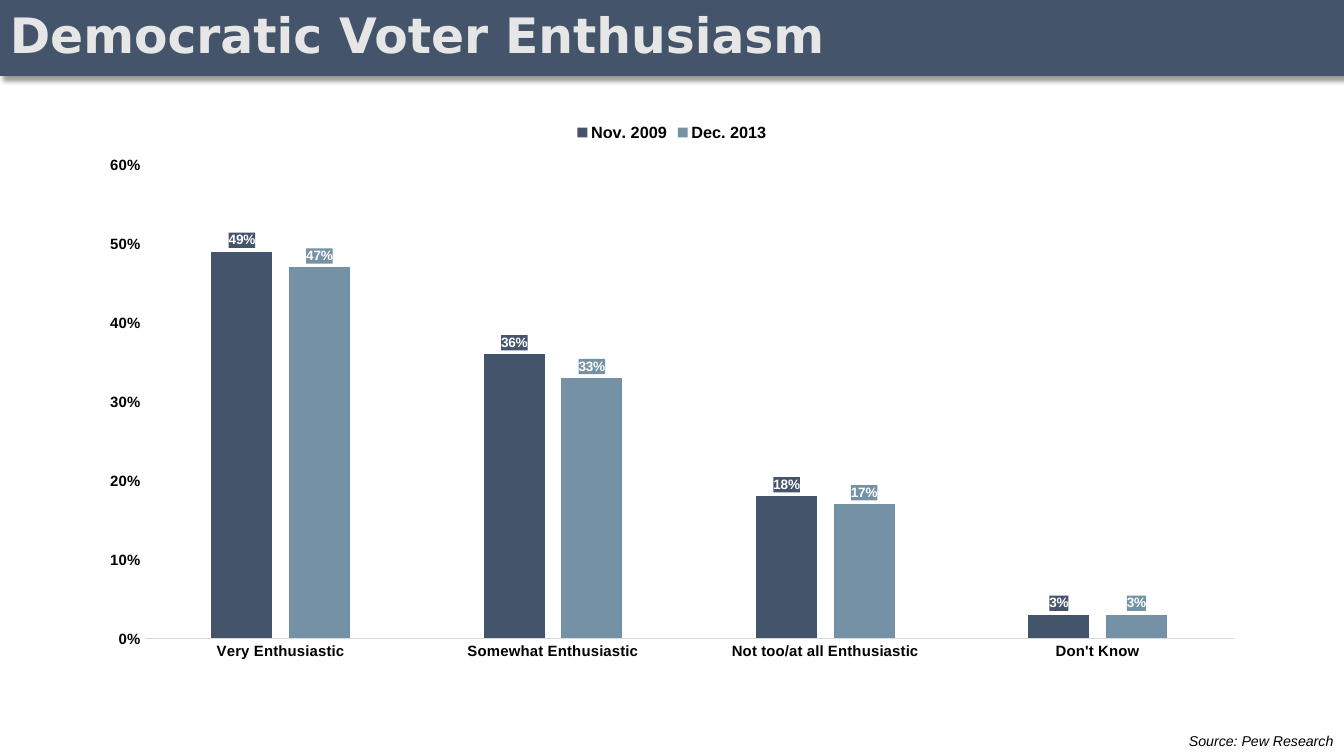
"""Build a slide with a column chart of voter enthusiasm in two years."""
import pptx
import pptx.chart.data
import pptx.dml.color
import pptx.enum.chart
import pptx.enum.shapes
import pptx.enum.text
import pptx.oxml
import pptx.oxml.ns
import pptx.util

Cm, Pt = pptx.util.Cm, pptx.util.Pt

TITLE = "Democratic Voter Enthusiasm"
SOURCE = "Source: Pew Research"
GROUPS = ["Very Enthusiastic", "Somewhat Enthusiastic",
          "Not too/at all Enthusiastic", "Don't Know"]
SERIES = [
    ("Nov. 2009", "44546A", (0.49, 0.36, 0.18, 0.03)),
    ("Dec. 2013", "7591A5", (0.47, 0.33, 0.17, 0.03)),
]
NAVY, PALE, BLACK, WHITE, GREY = "44546A", "E7E6E6", "000000", "FFFFFF", "D9D9D9"
PERCENT = "0%"

WIDE, HIGH = Cm(35), Cm(19.69)
BAND = (0, 0, WIDE, Cm(1.97))
CHART = (Cm(2.26), Cm(2.94), Cm(30.48), Cm(14.53))
NOTE = (Cm(28.58), Cm(18.96), Cm(6.4), Cm(0.74))

SHADOW = (
    '<a:effectLst %s><a:outerShdw blurRad="50800" dist="38100" dir="2700000" '
    'algn="tl" rotWithShape="0"><a:srgbClr val="000000"><a:alpha val="40000"/>'
    '</a:srgbClr></a:outerShdw></a:effectLst>' % pptx.oxml.ns.nsdecls("a"))
TAG = ('<c:spPr %s><a:solidFill><a:srgbClr val="%s"/></a:solidFill>'
       '<a:ln><a:noFill/></a:ln></c:spPr>')


def paint(fill, tone):
    """Set a solid colour on a fill."""
    fill.solid()
    fill.fore_color.rgb = pptx.dml.color.RGBColor.from_string(tone)


def style(font, size, tone, face="Arial", bold=False, slant=False):
    """Set the face, size, colour and weight of a font."""
    font.name, font.size = face, Pt(size)
    font.bold, font.italic = bold, slant
    paint(font.fill, tone)


def add_head(slide):
    """Add the title on its shaded band."""
    title = slide.shapes.title
    band = slide.shapes.add_shape(pptx.enum.shapes.MSO_SHAPE.RECTANGLE, *BAND)
    paint(band.fill, NAVY)
    paint(band.line.fill, NAVY)
    band.line.width = Pt(1)
    band.element.spPr.append(pptx.oxml.parse_xml(SHADOW))
    title.element.addprevious(band.element)

    title.left, title.top, title.width, title.height = BAND
    frame = title.text_frame
    frame.text = TITLE
    frame.vertical_anchor = pptx.enum.text.MSO_ANCHOR.MIDDLE
    para = frame.paragraphs[0]
    para.alignment = pptx.enum.text.PP_ALIGN.LEFT
    para.line_spacing = 0.9
    style(para.runs[0].font, 36, PALE, "DejaVu Sans", bold=True)


def add_note(slide):
    """Add the source line."""
    frame = slide.shapes.add_textbox(*NOTE).text_frame
    frame.word_wrap = True
    frame.text = SOURCE
    para = frame.paragraphs[0]
    para.alignment = pptx.enum.text.PP_ALIGN.RIGHT
    style(para.runs[0].font, 10.5, BLACK, slant=True)


def add_chart(slide):
    """Add the column chart with its legend."""
    data = pptx.chart.data.CategoryChartData(number_format=PERCENT)
    data.categories = GROUPS
    for name, tone, vals in SERIES:
        data.add_series(name, vals)
    kind = pptx.enum.chart.XL_CHART_TYPE.COLUMN_CLUSTERED
    chart = slide.shapes.add_chart(kind, *CHART, data).chart
    style(chart.font, 10, BLACK)
    chart.has_title = False
    chart.has_legend = True
    chart.legend.position = pptx.enum.chart.XL_LEGEND_POSITION.TOP
    chart.legend.include_in_layout = False
    style(chart.legend.font, 12, BLACK, bold=True)
    return chart


def set_axes(chart):
    """Format the group axis and the percent scale."""
    groups, scale = chart.category_axis, chart.value_axis
    for axis in (groups, scale):
        axis.has_major_gridlines = False
        axis.major_tick_mark = pptx.enum.chart.XL_TICK_MARK.NONE
        axis.minor_tick_mark = pptx.enum.chart.XL_TICK_MARK.NONE
        style(axis.tick_labels.font, 11, BLACK, bold=True)
    paint(groups.format.line.fill, GREY)
    groups.format.line.width = Pt(0.75)
    scale.format.line.fill.background()
    scale.minimum_scale, scale.maximum_scale, scale.major_unit = 0, 0.6, 0.1
    scale.tick_labels.number_format = PERCENT
    scale.tick_labels.number_format_is_linked = False


def set_bars(chart):
    """Colour the bars and put a label in the same colour above each."""
    plot = chart.plots[0]
    plot.vary_by_categories = False
    plot.gap_width, plot.overlap = 219, -27
    for bars, (name, tone, vals) in zip(plot.series, SERIES):
        paint(bars.format.fill, tone)
        tags = bars.data_labels
        tags.show_value = True
        tags.number_format = PERCENT
        tags.number_format_is_linked = False
        tags.position = pptx.enum.chart.XL_LABEL_POSITION.OUTSIDE_END
        style(tags.font, 10, WHITE, bold=True)

    spaces = pptx.oxml.ns.nsdecls("c", "a")
    texts = chart.element.xpath(".//c:ser/c:dLbls/c:txPr")
    for text, (name, tone, vals) in zip(texts, SERIES):
        text.addprevious(pptx.oxml.parse_xml(TAG % (spaces, tone)))


def main():
    """Make the slide and save it."""
    deck = pptx.Presentation()
    deck.slide_width, deck.slide_height = WIDE, HIGH
    slide = deck.slides.add_slide(deck.slide_layouts[5])
    add_head(slide)
    chart = add_chart(slide)
    set_axes(chart)
    set_bars(chart)
    add_note(slide)
    deck.save("out.pptx")


if __name__ == "__main__":
    main()
